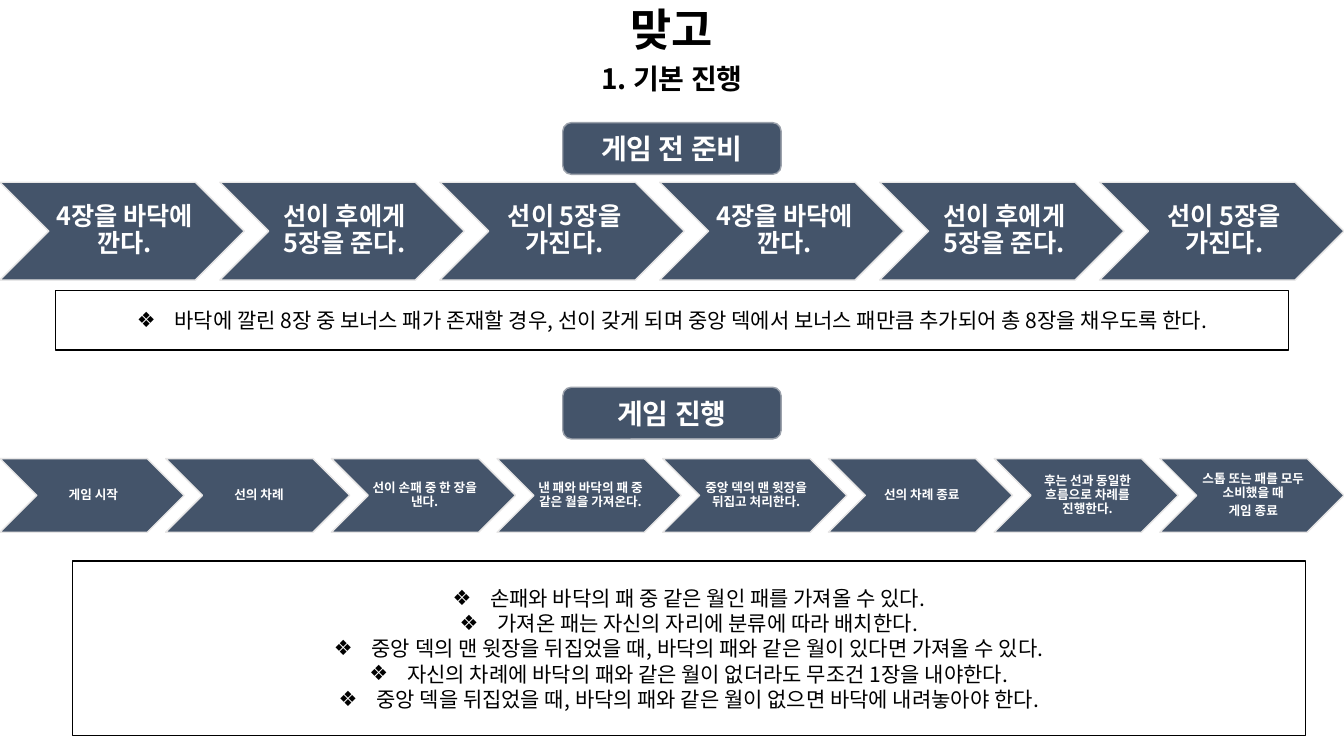
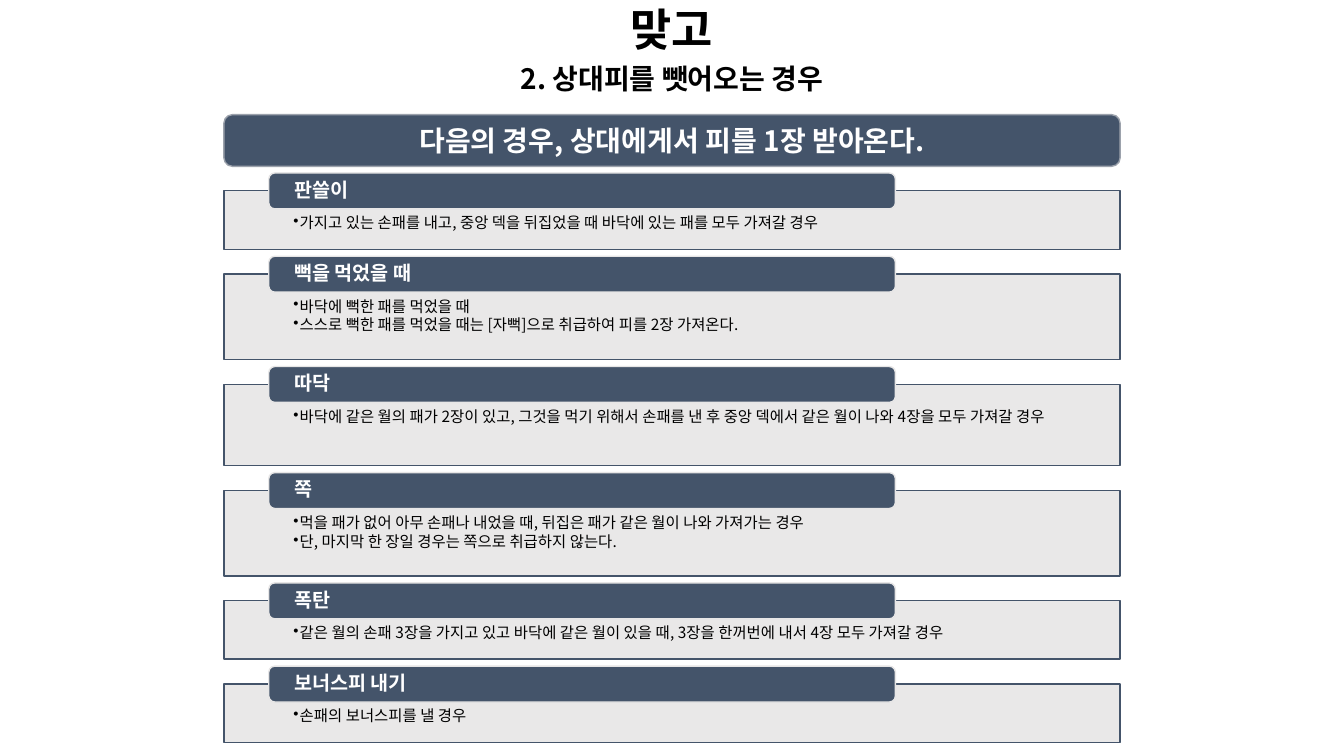
import lxml.etree
import pptx
import pptx.dml.color
import pptx.enum.shapes
import pptx.enum.text
import pptx.oxml.ns
import pptx.util

SHAPES = pptx.enum.shapes.MSO_SHAPE
ALIGN = pptx.enum.text.PP_ALIGN
ANCHOR = pptx.enum.text.MSO_ANCHOR
COLUMNS, ROWS = 160, 90

OPENING = ["4장을 바닥에 깐다.", "선이 후에게 5장을 준다.", "선이 5장을 가진다."]
BONUS_RULE = [
    "바닥에 깔린 8장 중 보너스 패가 존재할 경우, 선이 갖게 되며 "
    "중앙 덱에서 보너스 패만큼 추가되어 총 8장을 채우도록 한다.",
]
TURN = [
    "게임 시작",
    "선의 차례",
    "선이 손패 중 한 장을 낸다.",
    "낸 패와 바닥의 패 중 같은 월을 가져온다.",
    "중앙 덱의 맨 윗장을 뒤집고 처리한다.",
    "선의 차례 종료",
    "후는 선과 동일한 흐름으로 차례를 진행한다.",
    "스톱 또는 패를 모두 소비했을 때\n게임 종료",
]
TURN_RULES = [
    "손패와 바닥의 패 중 같은 월인 패를 가져올 수 있다.",
    "가져온 패는 자신의 자리에 분류에 따라 배치한다.",
    "중앙 덱의 맨 윗장을 뒤집었을 때, 바닥의 패와 같은 월이 있다면 가져올 수 있다.",
    "자신의 차례에 바닥의 패와 같은 월이 없더라도 무조건 1장을 내야한다.",
    "중앙 덱을 뒤집었을 때, 바닥의 패와 같은 월이 없으면 바닥에 내려놓아야 한다.",
]
CASES = [
    ("판쓸이", 6.98, ["가지고 있는 손패를 내고, 중앙 덱을 뒤집었을 때 바닥에 있는 패를 모두 가져갈 경우"]),
    ("뻑을 먹었을 때", 10.2, [
        "바닥에 뻑한 패를 먹었을 때",
        "스스로 뻑한 패를 먹었을 때는 [자뻑]으로 취급하여 피를 2장 가져온다.",
    ]),
    ("따닥", 9.7, [
        "바닥에 같은 월의 패가 2장이 있고, 그것을 먹기 위해서 손패를 낸 후 "
        "중앙 덱에서 같은 월이 나와 4장을 모두 가져갈 경우",
    ]),
    ("쪽", 10.2, [
        "먹을 패가 없어 아무 손패나 내었을 때, 뒤집은 패가 같은 월이 나와 가져가는 경우",
        "단, 마지막 한 장일 경우는 쪽으로 취급하지 않는다.",
    ]),
    ("폭탄", 6.98, ["같은 월의 손패 3장을 가지고 있고 바닥에 같은 월이 있을 때, 3장을 한꺼번에 내서 4장 모두 가져갈 경우"]),
    ("보너스피 내기", 6.98, ["손패의 보너스피를 낼 경우"]),
]


class Deck:
    """Holds the shared style and the slide being built on a 160 by 90 grid."""

    FONT = "Noto Sans CJK KR"
    COLORS = {"navy": "44546A", "pale": "E7E6E6", "edge": "9CA2AC", "ink": "000000", "paper": "FFFFFF"}

    def __init__(self):
        """Start an empty widescreen presentation."""
        self.prs = pptx.Presentation()
        self.prs.slide_width = pptx.util.Inches(13.33)
        self.prs.slide_height = pptx.util.Inches(7.5)
        self.slide = None

    def color(self, name):
        """Return a named colour."""
        return pptx.dml.color.RGBColor.from_string(self.COLORS[name])

    def x(self, columns):
        """Turn columns into a length."""
        return round(self.prs.slide_width * columns / COLUMNS)

    def y(self, rows):
        """Turn rows into a length."""
        return round(self.prs.slide_height * rows / ROWS)

    def place(self, shape, left, top, width, height):
        """Move a placeholder to a grid position."""
        shape.left, shape.top = self.x(left), self.y(top)
        shape.width, shape.height = self.x(width), self.y(height)

    def paint(self, shape, fill, line):
        """Give a shape its fill and outline."""
        shape.fill.solid()
        shape.fill.fore_color.rgb = self.color(fill)
        shape.line.color.rgb = self.color(line)
        shape.line.width = pptx.util.Pt(1)

    def box(self, kind, left, top, width, height, fill, line):
        """Add a painted preset shape without shadow."""
        shape = self.slide.shapes.add_shape(kind, self.x(left), self.y(top), self.x(width), self.y(height))
        shape.shadow.inherit = False
        self.paint(shape, fill, line)
        return shape

    def letter(self, shape, lines, size, color="paper", bold=True, align=ALIGN.CENTER, anchor=ANCHOR.MIDDLE,
               insets=(1.2, 0.6, 1.2, 0.6), spacing=1, after=0, bullet=None, indent=0):
        """Fill a shape with formatted paragraphs."""
        frame = shape.text_frame
        frame.auto_size = pptx.enum.text.MSO_AUTO_SIZE.NONE
        frame.word_wrap, frame.vertical_anchor = True, anchor
        frame.margin_left, frame.margin_right = self.x(insets[0]), self.x(insets[2])
        frame.margin_top, frame.margin_bottom = self.y(insets[1]), self.y(insets[3])
        for index, line in enumerate(lines):
            paragraph = frame.add_paragraph() if index else frame.paragraphs[0]
            paragraph.alignment, paragraph.line_spacing = align, spacing
            paragraph.space_before, paragraph.space_after = pptx.util.Pt(0), pptx.util.Pt(size * after)
            if bullet:
                self.bullet(paragraph, bullet, indent)
            run = paragraph.add_run()
            run.text = line
            run.font.size, run.font.bold, run.font.name = pptx.util.Pt(size), bold, self.FONT
            run.font.color.rgb = self.color(color)
            east_asian = lxml.etree.SubElement(run.font._element, pptx.oxml.ns.qn("a:ea"))
            east_asian.set("typeface", self.FONT)

    def bullet(self, paragraph, mark, indent):
        """Hang a bullet mark in front of a paragraph."""
        properties = paragraph._p.get_or_add_pPr()
        properties.set("marL", str(self.x(indent)))
        properties.set("indent", str(-self.x(indent)))
        lxml.etree.SubElement(properties, pptx.oxml.ns.qn("a:buChar")).set("char", mark)

    def page(self, title, subtitle):
        """Start a slide with its title and subtitle."""
        self.slide = self.prs.slides.add_slide(self.prs.slide_layouts[4])
        placeholders = {item.placeholder_format.idx: item for item in self.slide.placeholders}
        heading, topic, *self.free = [placeholders[idx] for idx in range(5)]
        self.place(heading, 0, 0, COLUMNS, 6.84)
        self.letter(heading, [title], 32, "ink")
        self.place(topic, 0, 6.84, COLUMNS, 4.92)
        self.letter(topic, [subtitle], 20, "ink")

    def finish(self):
        """Remove the placeholders left empty on the slide."""
        for unused in self.free:
            unused._element.getparent().remove(unused._element)

    def banner(self, text, top, width):
        """Add a centred rounded heading."""
        heading = self.box(SHAPES.ROUNDED_RECTANGLE, (COLUMNS - width) / 2, top, width, 6.16, "navy", "edge")
        self.letter(heading, [text], 20)

    def process(self, steps, top, size):
        """Add a row of chevrons across the whole slide."""
        width = COLUMNS / (0.9 * (len(steps) - 1) + 1)
        insets = (size / 20, size / 60, size / 60, size / 60)
        for index, step in enumerate(steps):
            chevron = self.box(SHAPES.CHEVRON, index * width * 0.9, top, width, width * 0.4, "navy", "pale")
            self.letter(chevron, step.split("\n"), size, insets=insets, spacing=0.9, after=0.35)

    def rules(self, lines, left, top, height):
        """Turn the next free body placeholder into a framed list."""
        frame = self.free.pop(0)
        self.place(frame, left, top, 146.8, height)
        self.paint(frame, "paper", "ink")
        self.letter(frame, lines, 15, "ink", bold=False, bullet="❖", indent=4.5)

    def case(self, name, lines, top, height):
        """Add a panel of conditions with a name tab on its top edge."""
        panel = self.box(SHAPES.RECTANGLE, 26.65, top, 106.7, height, "pale", "navy")
        tint = panel._element.spPr.find(".//" + pptx.oxml.ns.qn("a:srgbClr"))
        lxml.etree.SubElement(tint, pptx.oxml.ns.qn("a:alpha")).set("val", "90000")
        self.letter(panel, lines, 11, "ink", bold=False, align=ALIGN.LEFT, anchor=ANCHOR.TOP,
                    insets=(8.28, 2.95, 8.28, 1.1), spacing=0.9, after=0.15, bullet="•", indent=0.75)
        tab = self.box(SHAPES.ROUNDED_RECTANGLE, 32, top - 2.1, 74.6, 4.27, "navy", "pale")
        self.letter(tab, [name], 14, align=ALIGN.LEFT, insets=(2.8, 0, 2.8, 0), spacing=0.9, after=0.35)


def main():
    """Build and save both slides."""
    deck = Deck()

    deck.page("맞고", "1. 기본 진행")
    deck.banner("게임 전 준비", 14.6, 26)
    deck.process(OPENING * 2, 21.7, 18)
    deck.rules(BONUS_RULE, 6.6, 34.6, 7.08)
    deck.banner("게임 진행", 46.1, 26)
    deck.process(TURN, 54.6, 9)
    deck.rules(TURN_RULES, 8.6, 66.8, 20.8)
    deck.finish()

    deck.page("맞고", "2. 상대피를 뺏어오는 경우")
    deck.banner("다음의 경우, 상대에게서 피를 1장 받아온다.", 13.65, 106.7)
    top = 22.7
    for name, height, lines in CASES:
        deck.case(name, lines, top, height)
        top += height + 2.93
    deck.finish()

    deck.prs.save("out.pptx")


if __name__ == "__main__":
    main()
